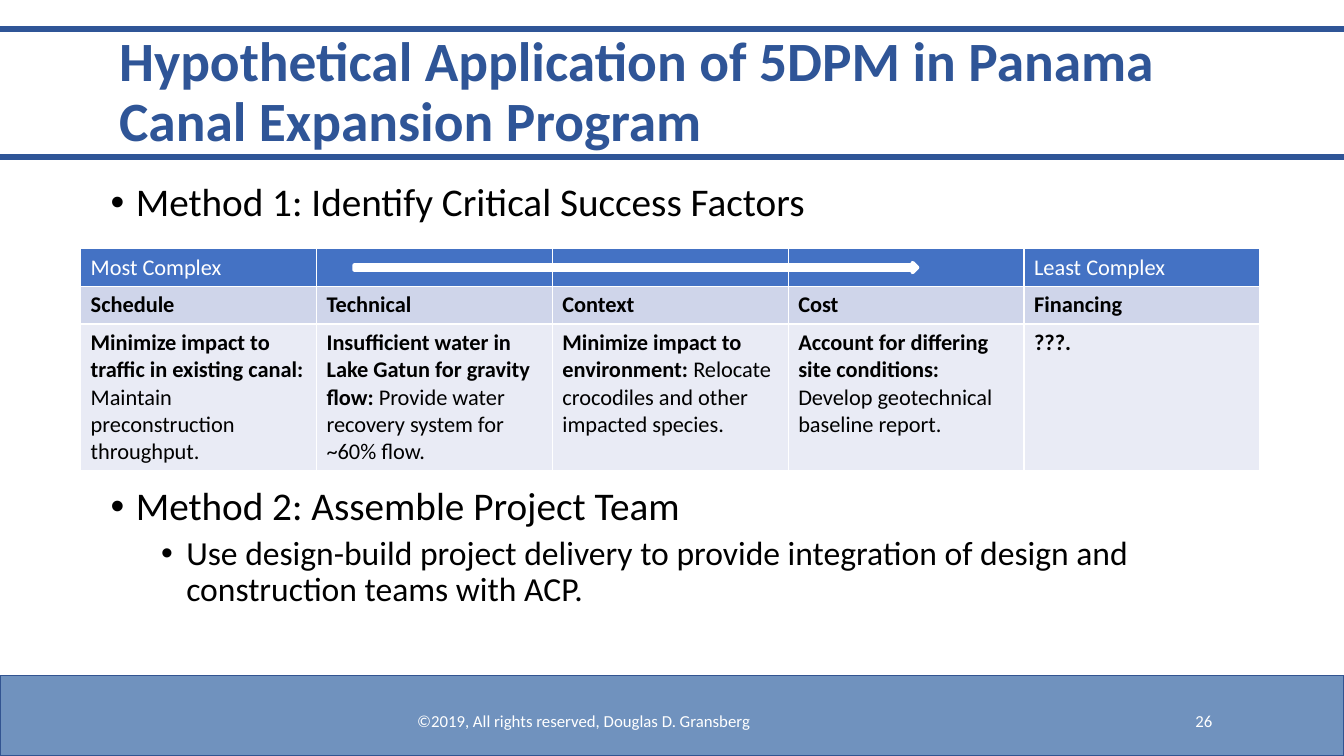
from dataclasses import dataclass

from lxml.etree import SubElement
from pptx import Presentation
from pptx.dml.color import RGBColor
from pptx.enum.shapes import MSO_CONNECTOR, MSO_SHAPE
from pptx.enum.text import MSO_ANCHOR, PP_ALIGN
from pptx.oxml.ns import qn
from pptx.util import Inches, Pt

WHITE = RGBColor(0xFF, 0xFF, 0xFF)
BLACK = RGBColor(0x00, 0x00, 0x00)
TITLE_BLUE = RGBColor(0x2F, 0x55, 0x97)
FOOTER_FILL = RGBColor(0x70, 0x92, 0xBE)
FOOTER_LINE = RGBColor(0x32, 0x54, 0x91)
HEADER_ROW = RGBColor(0x44, 0x72, 0xC4)
FACTOR_ROW = RGBColor(0xCF, 0xD5, 0xEA)
DETAIL_ROW = RGBColor(0xE9, 0xEB, 0xF5)
FONT = "Calibri"
COLUMNS, ROWS = 160, 90
UNIT = Inches(1) / 12
TABLE_TEXT = 16

FACTORS = [
    ("Most Complex", "Schedule", "Minimize impact to traffic in existing canal: ",
     "Maintain preconstruction throughput."),
    ("", "Technical", "Insufficient water in Lake Gatun for gravity flow: ",
     "Provide water recovery system for ~60% flow."),
    ("", "Context", "Minimize impact to environment: ",
     "Relocate crocodiles and other impacted species."),
    ("", "Cost", "Account for differing site conditions:",
     " Develop geotechnical baseline report."),
    ("Least Complex", "Financing", "???.", ""),
]


@dataclass
class Box:
    """An area of the slide in grid columns and rows."""
    left: float
    top: float
    width: float
    height: float

    def inside(self, left, top, width, height):
        return Box(self.left + left, self.top + top, width, height)

    def lengths(self):
        return [round(UNIT * n) for n in (self.left, self.top, self.width, self.height)]


def add_span(para, text, size, color=BLACK, bold=False):
    span = para.add_run()
    span.text = text
    span.font.name = FONT
    span.font.size = Pt(size)
    span.font.bold = bold
    span.font.color.rgb = color


def add_bullet(para, indent):
    properties = para._p.get_or_add_pPr()
    properties.set("marL", str(Inches(indent)))
    properties.set("indent", str(Inches(-0.25)))
    SubElement(properties, qn("a:buFont")).set("typeface", "Arial")
    SubElement(properties, qn("a:buChar")).set("char", "•")


def add_text(page, box, text, size, color=BLACK, bold=False, align=PP_ALIGN.LEFT,
             anchor=MSO_ANCHOR.MIDDLE, spacing=1.0):
    frame = page.shapes.add_textbox(*box.lengths()).text_frame
    frame.word_wrap = True
    frame.vertical_anchor = anchor
    para = frame.paragraphs[0]
    para.alignment = align
    para.line_spacing = spacing
    add_span(para, text, size, color, bold)
    return frame


def add_method(page, box, heading, detail=None):
    frame = add_text(page, box, heading, 28, anchor=MSO_ANCHOR.TOP, spacing=0.9)
    add_bullet(frame.paragraphs[0], 0.25)
    if detail:
        para = frame.add_paragraph()
        para.level = 1
        para.line_spacing = 0.9
        para.space_before = Pt(5)
        add_bullet(para, 0.75)
        add_span(para, detail, 24)


def add_filled_shape(page, kind, box, fill, line, width):
    shape = page.shapes.add_shape(kind, *box.lengths())
    shape.shadow.inherit = False
    shape.fill.solid()
    shape.fill.fore_color.rgb = fill
    shape.line.color.rgb = line
    shape.line.width = Pt(width)


def add_rule(page, box):
    """Draw a line along the top edge of the box."""
    left, top, width, _ = box.lengths()
    rule = page.shapes.add_connector(MSO_CONNECTOR.STRAIGHT, left, top, left + width, top)
    rule.line.color.rgb = TITLE_BLUE
    rule.line.width = Pt(4.25)
    SubElement(rule._element.spPr, qn("a:effectLst"))


def style_cell(cell, fill):
    """Give the cell thin white borders and a plain fill."""
    properties = cell._tc.get_or_add_tcPr()
    for side in ("a:lnL", "a:lnR", "a:lnT", "a:lnB"):
        border = SubElement(properties, qn(side), w=str(Pt(1)))
        SubElement(SubElement(border, qn("a:solidFill")), qn("a:srgbClr"), val=str(WHITE))
    cell.fill.solid()
    cell.fill.fore_color.rgb = fill


def fill_cell(cell, fill, spans):
    """Write (text, colour, bold) spans into a styled cell."""
    style_cell(cell, fill)
    para = cell.text_frame.paragraphs[0]
    for text, color, bold in spans:
        if text:
            add_span(para, text, TABLE_TEXT, color, bold)
    if not para.runs:
        SubElement(para._p, qn("a:endParaRPr"), sz=str(TABLE_TEXT * 100))


def add_factor_table(page, box):
    table = page.shapes.add_table(3, len(FACTORS), *box.lengths()).table
    for row, share in zip(table.rows, (0.17, 0.17, 0.66)):
        row.height = round(UNIT * box.height * share)
    for column, (scale, factor, goal, action) in enumerate(FACTORS):
        table.columns[column].width = round(UNIT * box.width / len(FACTORS))
        fill_cell(table.cell(0, column), HEADER_ROW, [(scale, WHITE, False)])
        fill_cell(table.cell(1, column), FACTOR_ROW, [(factor, BLACK, True)])
        fill_cell(table.cell(2, column), DETAIL_ROW,
                  [(goal, BLACK, True), (action, BLACK, False)])
    add_filled_shape(page, MSO_SHAPE.RIGHT_ARROW, box.inside(32.6, 1.7, 67, 1.1),
                     WHITE, WHITE, 3)


def add_header(page, box):
    for top in (0, box.height):
        add_rule(page, box.inside(0, top, box.width, 0))
    add_text(page, box.inside(13, 1.3, 136, 12.6),
             "Hypothetical Application of 5DPM in Panama Canal Expansion Program",
             39.6, color=TITLE_BLUE, bold=True, spacing=0.9)


def add_body(page, box):
    add_method(page, box.inside(12, 2.5, 138, 6.7),
               "Method 1: Identify Critical Success Factors")
    add_factor_table(page, box.inside(9.6, 10.9, 140.4, 26.4))
    add_method(page, box.inside(12, 38.7, 138, 19.7), "Method 2: Assemble Project Team",
               "Use design-build project delivery to provide integration of design and "
               "construction teams with ACP.")


def add_footer(page, box):
    add_filled_shape(page, MSO_SHAPE.RECTANGLE, box, FOOTER_FILL, FOOTER_LINE, 1)
    add_text(page, box.inside(32, 3, 75, 4.8),
             "©2019, All rights reserved, Douglas D. Gransberg",
             12, color=WHITE, align=PP_ALIGN.CENTER)
    add_text(page, box.inside(113, 3, 32.5, 4.8), "26", 12, color=WHITE,
             align=PP_ALIGN.RIGHT)


def main():
    deck = Presentation()
    deck.slide_width = round(UNIT * COLUMNS)
    deck.slide_height = round(UNIT * ROWS)
    page = deck.slides.add_slide(deck.slide_layouts[6])
    add_header(page, Box(0, 3.5, COLUMNS, 15.2))
    add_body(page, Box(0, 18.7, COLUMNS, 61.7))
    add_footer(page, Box(0, 80.4, COLUMNS, 9.6))
    deck.save("out.pptx")


if __name__ == "__main__":
    main()
